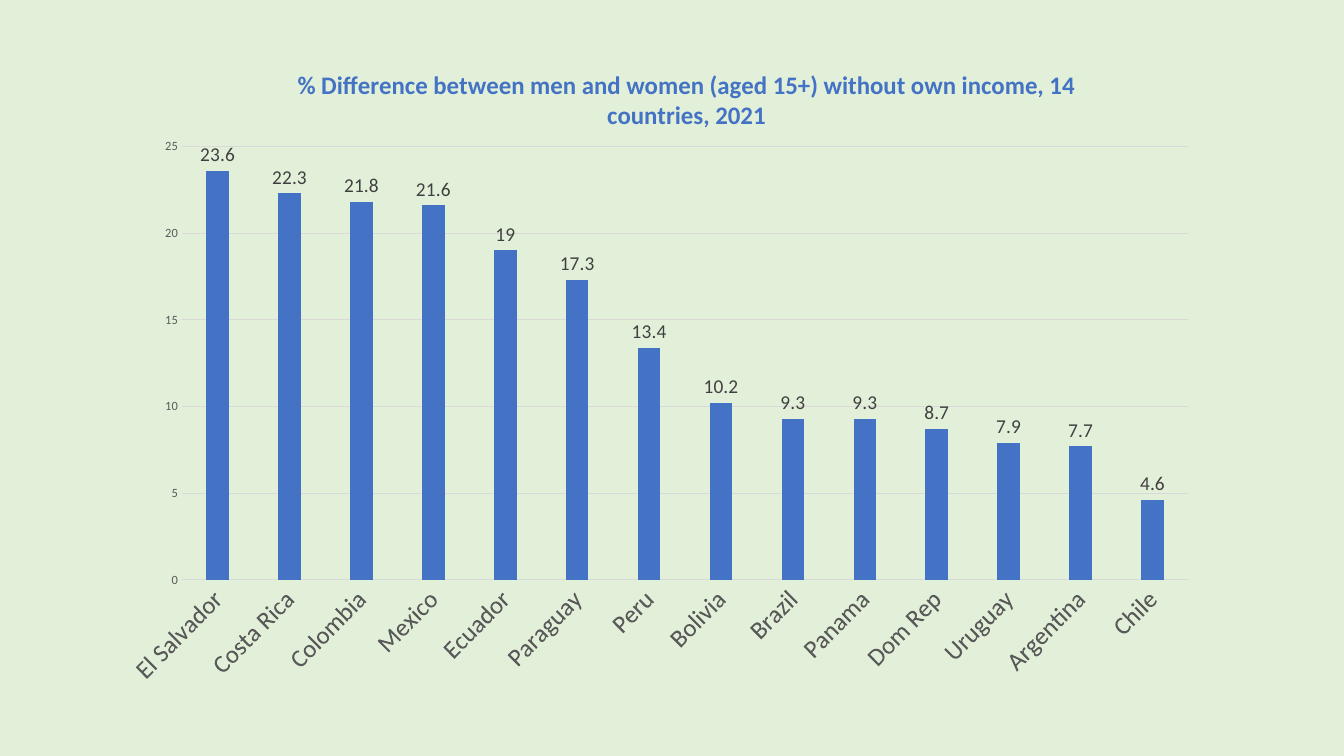
from typing import NamedTuple, Optional

from lxml import etree
from pptx import Presentation
from pptx import util as u
from pptx.chart import data as chart_data
from pptx.dml.color import RGBColor
from pptx.enum import chart as chart_enum
from pptx.oxml import ns

BACKGROUND = RGBColor(0xE2, 0xF0, 0xD9)
BLUE = RGBColor(0x44, 0x72, 0xC4)
LABEL_GREY = RGBColor(0x40, 0x40, 0x40)
AXIS_GREY = RGBColor(0x59, 0x59, 0x59)
LINE_GREY = RGBColor(0xD9, 0xD9, 0xD9)
FONT_NAME = "Calibri"
TITLE = ("% Difference between men and women (aged 15+) without own income, "
         "14 countries, 2021")


class Gap(NamedTuple):
    country: str
    value: float


class Layout(NamedTuple):
    """Place of a chart part, as fractions of the chart."""
    x: float
    y: float
    w: Optional[float] = None
    h: Optional[float] = None


GAPS = [
    Gap("El Salvador", 23.6), Gap("Costa Rica", 22.3), Gap("Colombia", 21.8),
    Gap("Mexico", 21.6), Gap("Ecuador", 19), Gap("Paraguay", 17.3),
    Gap("Peru", 13.4), Gap("Bolivia", 10.2), Gap("Brazil", 9.3),
    Gap("Panama", 9.3), Gap("Dom Rep", 8.7), Gap("Uruguay", 7.9),
    Gap("Argentina", 7.7), Gap("Chile", 4.6),
]
TITLE_LAYOUT = Layout(0.14, 0.035)
PLOT_LAYOUT = Layout(0.035, 0.159, 0.949, 0.638)


def style_font(font, size: float, color: RGBColor, bold: bool = False) -> None:
    font.name = FONT_NAME
    font.size = u.Pt(size)
    font.bold = bold
    font.color.rgb = color


def style_line(line) -> None:
    line.color.rgb = LINE_GREY
    line.width = u.Pt(0.75)


def set_layout(layout_element, layout: Layout, inner: bool = False) -> None:
    for child in list(layout_element):
        layout_element.remove(child)
    manual = etree.SubElement(layout_element, ns.qn("c:manualLayout"))
    settings = [("layoutTarget", "inner")] if inner else []
    settings += [("xMode", "edge"), ("yMode", "edge")]
    settings += [(key, str(value)) for key, value in layout._asdict().items()
                 if value is not None]
    for tag, value in settings:
        etree.SubElement(manual, ns.qn(f"c:{tag}")).set("val", value)


def add_layout(parent, position: int):
    layout_element = parent.find(ns.qn("c:layout"))
    if layout_element is None:
        layout_element = etree.Element(ns.qn("c:layout"))
        parent.insert(position, layout_element)
    return layout_element


def add_gap_chart(slide) -> None:
    data = chart_data.CategoryChartData()
    data.categories = [gap.country for gap in GAPS]
    data.add_series("Series 1", [gap.value for gap in GAPS])
    chart = slide.shapes.add_chart(
        chart_enum.XL_CHART_TYPE.COLUMN_CLUSTERED,
        u.Cm(3.25), u.Cm(0.97), u.Cm(27.13), u.Cm(17.12), data).chart
    chart.has_legend = False
    chart.font.name = FONT_NAME
    chart.font.size = u.Pt(10)

    # Title
    chart.has_title = True
    paragraph = chart.chart_title.text_frame.paragraphs[0]
    paragraph.text = TITLE
    style_font(paragraph.font, 18, BLUE, bold=True)
    chart.chart_title.include_in_layout = False
    title_element = chart.chart_title._element
    set_layout(add_layout(title_element, 1), TITLE_LAYOUT)

    # Axes
    for axis, size in ((chart.category_axis, 18), (chart.value_axis, 9)):
        axis.major_tick_mark = chart_enum.XL_TICK_MARK.NONE
        axis.minor_tick_mark = chart_enum.XL_TICK_MARK.NONE
        style_font(axis.tick_labels.font, size, AXIS_GREY)
    style_line(chart.category_axis.format.line)
    chart.value_axis.format.line.fill.background()
    chart.value_axis.minimum_scale = 0
    chart.value_axis.maximum_scale = 25
    chart.value_axis.major_unit = 5
    style_line(chart.value_axis.major_gridlines.format.line)

    # Columns and their labels
    plot = chart.plots[0]
    plot.gap_width = 219
    plot.overlap = -27
    plot.vary_by_categories = False
    series = plot.series[0]
    series.format.fill.solid()
    series.format.fill.fore_color.rgb = BLUE
    labels = series.data_labels
    labels.show_value = True
    labels.position = chart_enum.XL_LABEL_POSITION.OUTSIDE_END
    style_font(labels.font, 14, LABEL_GREY)
    plot_area = chart._chartSpace.chart.plotArea
    set_layout(add_layout(plot_area, 0), PLOT_LAYOUT, inner=True)


def main() -> None:
    presentation = Presentation()
    presentation.slide_width = u.Cm(33.87)
    presentation.slide_height = u.Cm(19.05)
    slide = presentation.slides.add_slide(presentation.slide_layouts[6])
    slide.background.fill.solid()
    slide.background.fill.fore_color.rgb = BACKGROUND
    add_gap_chart(slide)
    presentation.save("out.pptx")


if __name__ == "__main__":
    main()
